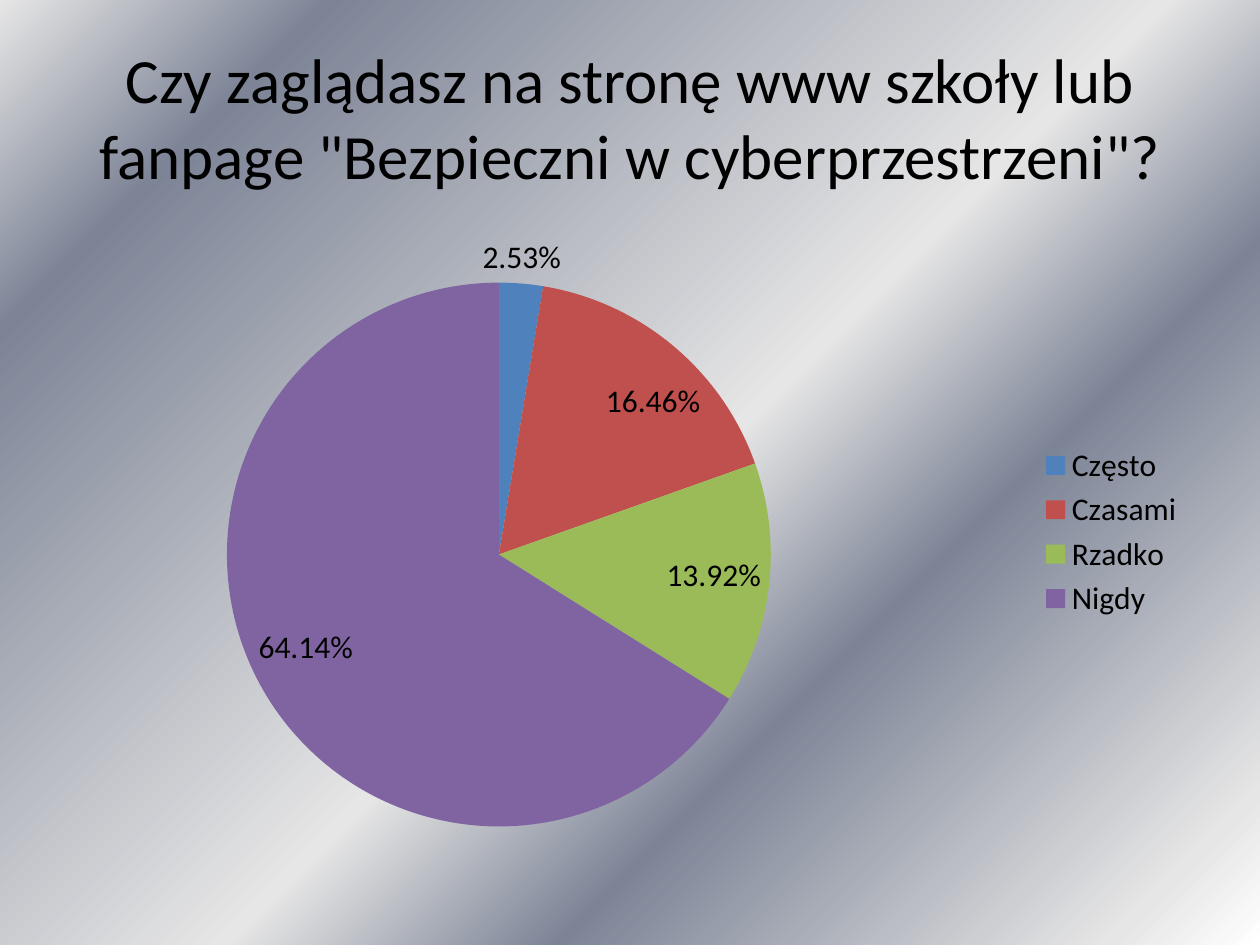
import pptx
import pptx.chart.data
import pptx.dml.color
import pptx.enum.chart
import pptx.enum.text
import pptx.oxml
import pptx.oxml.ns
import pptx.util

RGBColor = pptx.dml.color.RGBColor
BLACK = RGBColor(0x00, 0x00, 0x00)
WHITE = RGBColor(0xFF, 0xFF, 0xFF)
SILVER = RGBColor(0xE6, 0xE6, 0xE6)
STEEL = RGBColor(0x7D, 0x84, 0x96)
BLUE = RGBColor(0x4F, 0x81, 0xBD)
RED = RGBColor(0xC0, 0x50, 0x4D)
GREEN = RGBColor(0x9B, 0xBB, 0x59)
PURPLE = RGBColor(0x80, 0x64, 0xA2)

FONT = "Calibri"
WIDTH, HEIGHT = pptx.util.Inches(10), pptx.util.Inches(7.5)
MARGIN = 0.05
TITLE = 'Czy zaglądasz na stronę www szkoły lub fanpage "Bezpieczni w cyberprzestrzeni"?'
BACKGROUND_STOPS = [(0, WHITE), (7, SILVER), (32, STEEL),
                    (47, SILVER), (85, STEEL), (100, SILVER)]
BACKGROUND_ANGLE = 225
ANSWERS = [("Często", 0.0253, BLUE), ("Czasami", 0.1646, RED),
           ("Rzadko", 0.1392, GREEN), ("Nigdy", 0.6414, PURPLE)]


def frame(top, height):
    """Return a full-width frame between the margins, from shares of the height."""
    return (int(WIDTH * MARGIN), int(HEIGHT * top),
            int(WIDTH * (1 - 2 * MARGIN)), int(HEIGHT * height))


def style_font(font, size):
    font.name = FONT
    font.size = pptx.util.Pt(size)
    font.color.rgb = BLACK


def paint_background(page):
    page.background.fill.gradient()
    gradient = page.element.xpath(".//p:bg//a:gradFill")[0]
    for child in list(gradient):
        gradient.remove(child)
    stops = "".join(
        f'<a:gs pos="{percent * 1000}"><a:srgbClr val="{color}"/></a:gs>'
        for percent, color in BACKGROUND_STOPS)
    namespace = pptx.oxml.ns.nsdecls("a")
    gradient.append(pptx.oxml.parse_xml(f"<a:gsLst {namespace}>{stops}</a:gsLst>"))
    gradient.append(pptx.oxml.parse_xml(
        f'<a:lin {namespace} ang="{BACKGROUND_ANGLE * 60000}" scaled="0"/>'))


def write_title(page):
    box = page.shapes.title
    box.left, box.top, box.width, box.height = frame(0.04, 1 / 6)
    box.text_frame.word_wrap = True
    box.text_frame.vertical_anchor = pptx.enum.text.MSO_ANCHOR.MIDDLE
    para = box.text_frame.paragraphs[0]
    para.alignment = pptx.enum.text.PP_ALIGN.CENTER
    span = para.add_run()
    span.text = TITLE
    style_font(span.font, 36)


def add_answer_pie(page):
    data = pptx.chart.data.CategoryChartData(number_format="0.00%")
    data.categories = [name for name, _, _ in ANSWERS]
    data.add_series("Series 1", [share for _, share, _ in ANSWERS])
    chart = page.shapes.add_chart(
        pptx.enum.chart.XL_CHART_TYPE.PIE, *frame(0.233, 0.66), data).chart
    style_font(chart.font, 18)
    chart.has_title = False
    chart.has_legend = True
    chart.legend.position = pptx.enum.chart.XL_LEGEND_POSITION.RIGHT
    chart.legend.include_in_layout = False

    plot = chart.plots[0]
    plot.vary_by_categories = True
    for index, (_, _, color) in enumerate(ANSWERS):
        fill = plot.series[0].points[index].format.fill
        fill.solid()
        fill.fore_color.rgb = color

    labels = plot.series[0].data_labels
    labels.show_value = True
    labels.number_format = "0.00%"
    labels.number_format_is_linked = False
    labels.position = pptx.enum.chart.XL_LABEL_POSITION.BEST_FIT
    style_font(labels.font, 18)


def main():
    deck = pptx.Presentation()
    deck.slide_width, deck.slide_height = WIDTH, HEIGHT
    page = deck.slides.add_slide(deck.slide_layouts.get_by_name("Title Only"))
    paint_background(page)
    write_title(page)
    add_answer_pie(page)
    deck.save("out.pptx")


if __name__ == "__main__":
    main()
